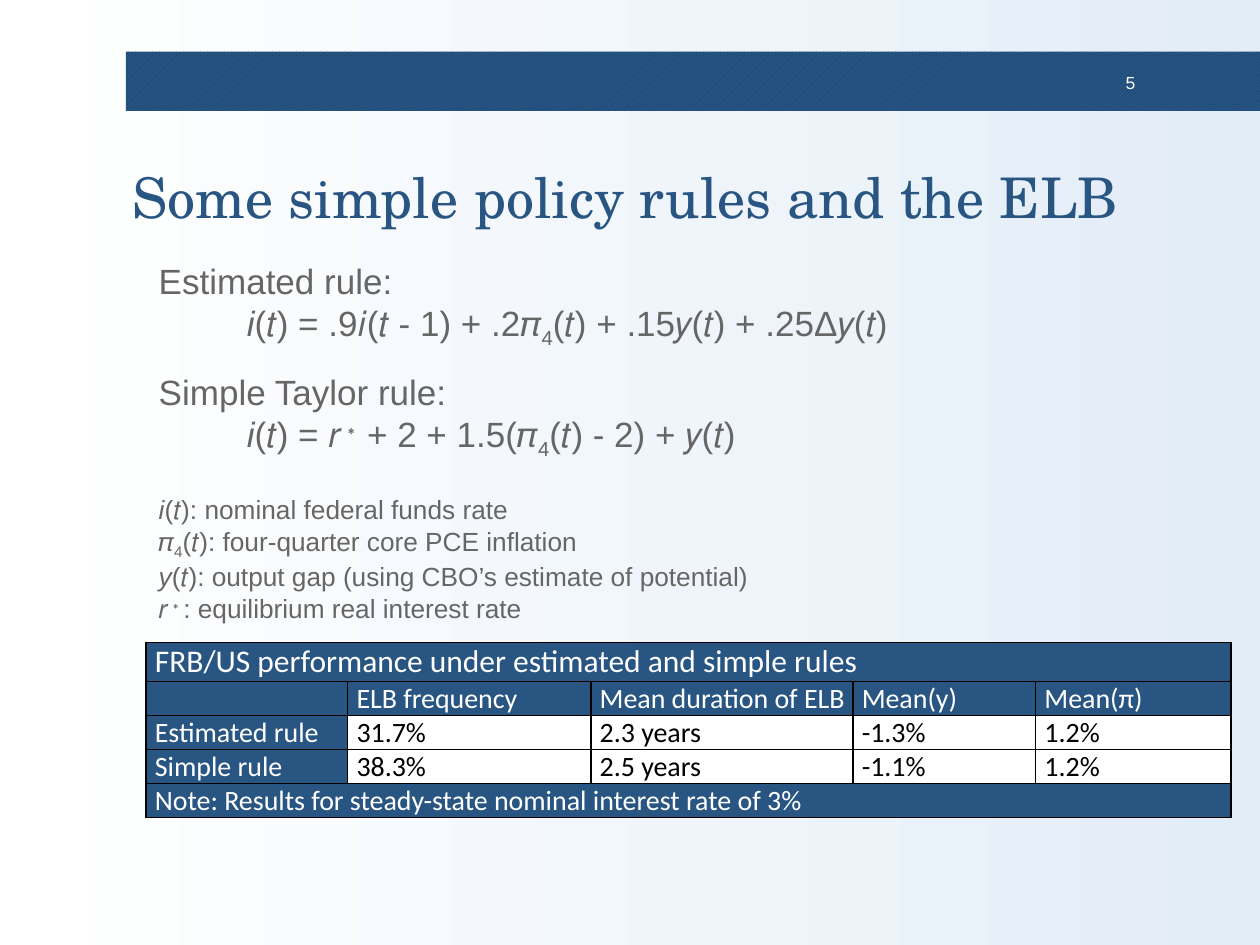
from lxml import etree
from pptx import Presentation, util as u
from pptx.dml.color import RGBColor
from pptx.enum import dml, shapes, text
from pptx.oxml import ns

NAVY, GREY, WHITE, BLACK = "295582", "666666", "FFFFFF", "000000"


def rgb(code):
    return RGBColor.from_string(code)


def put(para, words, size, face, color, **extra):
    """Add one run, with its font set from format values."""
    run = para.add_run()
    run.text = words
    look = {"size": u.Pt(size), "name": face, **extra}
    for key, val in look.items():
        setattr(run.font, key, val)
    run.font.color.rgb = rgb(color)
    return run


deck = Presentation()
deck.slide_width, deck.slide_height = u.Inches(10), u.Inches(7.5)
slide = deck.slides.add_slide(deck.slide_layouts[6])

# Background fading left to right
back = slide.background.fill
back.gradient()
back.gradient_angle = 0
for stop, code in zip(back.gradient_stops, (WHITE, "E3EDF7")):
    stop.color.rgb = rgb(code)

# Hatched top band
band = slide.shapes.add_shape(
    shapes.MSO_SHAPE.RECTANGLE,
    u.Inches(1), u.Inches(0.41), u.Inches(9), u.Inches(0.47))
band.shadow.inherit = False
band.line.fill.background()
band.fill.patterned()
band.fill.pattern = dml.MSO_PATTERN.LIGHT_UPWARD_DIAGONAL
band.fill.fore_color.rgb = rgb("083868")
band.fill.back_color.rgb = rgb(NAVY)

# Text frames: page number, title, body
frames = []
for box, pad in (((8.67, 0.53, 0.41, 0.23), 0.07),
                 ((1.01, 0.99, 8.05, 1.13), 0.04),
                 ((1.01, 2.02, 8.36, 2.89), 0.04)):
    frame = slide.shapes.add_textbox(*map(u.Inches, box)).text_frame
    frame.word_wrap = True
    frame.margin_left = frame.margin_right = u.Inches(pad)
    frame.margin_top = frame.margin_bottom = u.Inches(0.04)
    frames.append(frame)
page, title, body = frames

page.paragraphs[0].alignment = text.PP_ALIGN.RIGHT
put(page.paragraphs[0], "5", 10, "Arial", WHITE)
title.vertical_anchor = text.MSO_ANCHOR.MIDDLE
put(title.paragraphs[0], "Some simple policy rules and the ELB",
    32, "TeX Gyre Schola", NAVY)

# Rules and legend: "|" parts the runs, "/" marks italic,
# "_" marks subscript and "^" superscript
marks = {"/": ("italic", None), "_": (None, "-25000"), "^": (None, "30000")}
lines = [  # words, size, left indent, space before
    ("Estimated rule:", 20, 0.21, 0),
    ("/i|(𝑡) = .9𝑖(𝑡 - 1) + .2𝜋|_4|(𝑡) + .15𝑦(𝑡) + .25Δ𝑦(𝑡)", 20, 0.91, 0),
    ("Simple Taylor rule:", 20, 0.21, 12),
    ("/i|(𝑡) = 𝑟|^∗ |+ 2 + 1.5(𝜋|_4|(𝑡) - 2) + 𝑦(𝑡)", 20, 0.91, 0),
    ("/i|(𝑡): nominal federal funds rate", 15, 0.21, 19),
    ("𝜋|_4|(𝑡): four-quarter core PCE inflation", 15, 0.21, 0),
    ("/y|(𝑡): output gap (using CBO’s estimate of potential)", 15, 0.21, 0),
    ("𝑟|^∗|: equilibrium real interest rate", 15, 0.21, 0),
]
for num, (words, size, left, gap) in enumerate(lines):
    para = body.add_paragraph() if num else body.paragraphs[0]
    props = para._p.get_or_add_pPr()
    props.set("marL", str(u.Inches(left)))
    props.set("indent", "0")
    para.space_before = u.Pt(gap)
    for part in words.split("|"):
        slant, shift = marks.get(part[0], (None, None))
        if part[0] in marks:
            part = part[1:]
        run = put(para, part, size, "Arial", GREY, italic=bool(slant))
        if shift:
            run.font._element.set("baseline", shift)

# Results table
rows = [
    ["FRB/US performance under estimated and simple rules"],
    ["", "ELB frequency", "Mean duration of ELB", "Mean(y)", "Mean(π)"],
    ["Estimated rule", "31.7%", "2.3 years", "-1.3%", "1.2%"],
    ["Simple rule", "38.3%", "2.5 years", "-1.1%", "1.2%"],
    ["Note: Results for steady-state nominal interest rate of 3%"],
]
wide = [1.6, 1.93, 2.08, 1.45, 1.55]
high = [0.31] + [0.27] * 4
grid = slide.shapes.add_table(
    len(rows), len(wide), u.Inches(1.16), u.Inches(5.1),
    u.Inches(sum(wide)), u.Inches(sum(high))).table
for col, size in zip(grid.columns, wide):
    col.width = u.Inches(size)
for row, size in zip(grid.rows, high):
    row.height = u.Inches(size)

for r, row in enumerate(rows):
    if len(row) == 1:
        grid.cell(r, 0).merge(grid.cell(r, len(wide) - 1))
    for c in range(len(wide)):
        cell = grid.cell(r, c)
        data = r in (2, 3) and c > 0
        cell.margin_left, cell.margin_right = u.Inches(0.07), u.Inches(0.03)
        cell.margin_top = cell.margin_bottom = 0
        para = cell.text_frame.paragraphs[0]
        size = 16 if r else 18
        if c < len(row) and row[c]:
            put(para, row[c], size, "Calibri", BLACK if data else WHITE)
        else:
            end = etree.SubElement(para._p, ns.qn("a:endParaRPr"))
            end.set("sz", str(size * 100))
        # Borders come before the fill in the cell properties
        props = cell._tc.get_or_add_tcPr()
        for side in ("lnL", "lnR", "lnT", "lnB"):
            edge = etree.SubElement(props, ns.qn("a:" + side), w=str(u.Pt(1)))
            ink = etree.SubElement(edge, ns.qn("a:solidFill"))
            etree.SubElement(ink, ns.qn("a:srgbClr"), val=BLACK)
        cell.fill.solid()
        cell.fill.fore_color.rgb = rgb(WHITE if data else NAVY)

deck.save("out.pptx")
